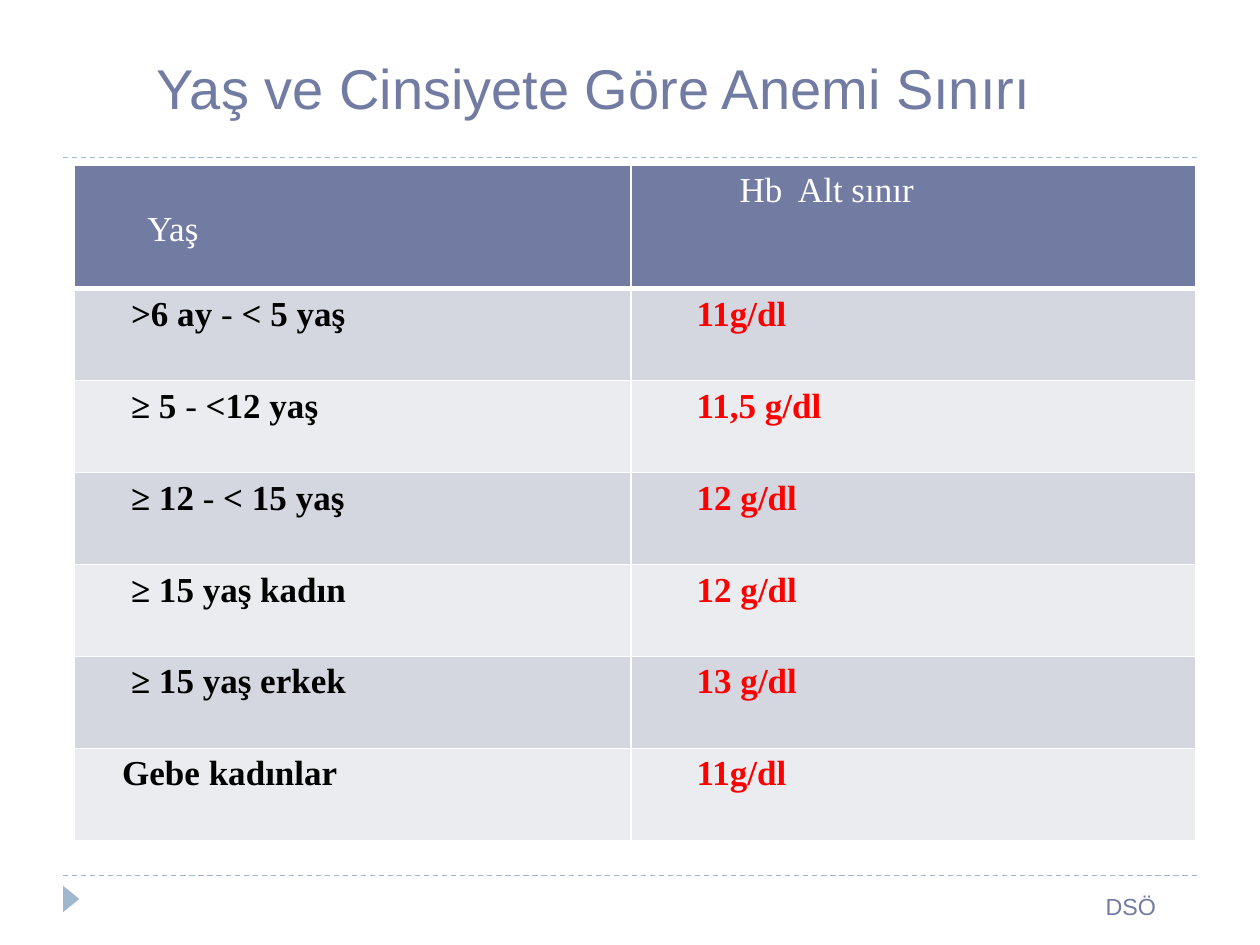
from pptx import Presentation
from pptx.dml.color import RGBColor
from pptx.enum.dml import MSO_LINE
from pptx.enum.shapes import MSO_CONNECTOR as Conn, MSO_SHAPE as Shape
from pptx.enum.text import MSO_ANCHOR as Anchor, PP_ALIGN as Align
from pptx.oxml.ns import qn
from pptx.util import Inches, Pt
from lxml.etree import SubElement as Sub

INK, PALE, RED = "727CA3", "9FB8CD", "FF0000"
WHITE, BLACK = "FFFFFF", "000000"
BANDS = ("D5D7E0", "EBECF0")


def rgb(code):
    return RGBColor.from_string(code)


class Page:
    sans, serif = "Arial", "Times New Roman"

    def __init__(self, slide):
        self.slide = slide
        self.shapes = slide.shapes

    def font(self, para, size, color, face, bold=False):
        font = para.font
        font.name, font.size, font.bold = face, Pt(size), bold
        font.color.rgb = rgb(color)

    def rule(self, y):
        line = self.shapes.add_connector(
            Conn.STRAIGHT, Inches(0.5), Inches(y), Inches(9.5), Inches(y))
        line.line.color.rgb = rgb(PALE)
        line.line.width = Pt(0.75)
        line.line.dash_style = MSO_LINE.DASH
        Sub(line._element.spPr, qn("a:effectLst"))

    def marker(self, x, y, w, h):
        mark = self.shapes.add_shape(
            Shape.ISOSCELES_TRIANGLE, Inches(x), Inches(y), Inches(w), Inches(h))
        mark.rotation = 90
        mark.shadow.inherit = False
        mark.fill.solid()
        mark.fill.fore_color.rgb = rgb(PALE)
        mark.line.fill.background()

    def text(self, words, x, y, w, h, size):
        box = self.shapes.add_textbox(Inches(x), Inches(y), Inches(w), Inches(h))
        frame = box.text_frame
        frame.word_wrap = True
        frame.vertical_anchor = Anchor.MIDDLE
        frame.margin_right = Inches(0.3)
        para = frame.paragraphs[0]
        para.text = words
        para.alignment = Align.CENTER
        self.font(para, size, INK, self.sans)

    def table(self, x, y, cols, rows):
        grid = self.shapes.add_table(
            len(rows), len(cols), Inches(x), Inches(y),
            Inches(sum(cols)), Inches(sum(rows))).table
        for col, width in zip(grid.columns, cols):
            col.width = Inches(width)
        for row, height in zip(grid.rows, rows):
            row.height = Inches(height)
        return grid

    def border(self, cell, base):
        props = cell._tc.get_or_add_tcPr()
        for side in "LRTB":
            width = base if side == "B" else 1
            line = Sub(props, qn(f"a:ln{side}"), w=str(Pt(width)))
            Sub(Sub(line, qn("a:solidFill")), qn("a:srgbClr"), val=WHITE)

    def cell(self, cell, words, fill, color, indent, bold=True, top=0.05, base=1):
        """Parts of the words between bars are set in regular weight."""
        self.border(cell, base)
        cell.fill.solid()
        cell.fill.fore_color.rgb = rgb(fill)
        cell.margin_left = Inches(0.1 + indent)
        cell.margin_top = Inches(top)
        para = cell.text_frame.paragraphs[0]
        self.font(para, 20, color, self.serif, bold)
        for i, part in enumerate(words.split("|")):
            run = para.add_run()
            run.text = part
            if i % 2:
                run.font.bold = False


LIMITS = [
    (">6 ay| - |< 5 yaş", "11g/dl"),
    ("≥ 5 |-| <12 yaş", "11,5 g/dl"),
    ("≥ 12 |-| < 15 yaş", "12 g/dl"),
    ("≥ 15 yaş kadın", "12 g/dl"),
    ("≥ 15 yaş erkek", "13 g/dl"),
    ("Gebe kadınlar", "11g/dl"),
]


def main():
    deck = Presentation()
    deck.slide_width, deck.slide_height = Inches(10), Inches(7.5)
    page = Page(deck.slides.add_slide(deck.slide_layouts[6]))

    # Frame lines and corner marker
    page.rule(6.95)
    page.rule(1.25)
    page.marker(0.46, 7.07, 0.21, 0.13)

    # Title
    page.text("Yaş ve Cinsiyete Göre Anemi Sınırı", 0.43, 0.21, 8.77, 0.97, 32)

    # Table: header, then one row per age group
    grid = page.table(0.59, 1.31, (4.42, 4.48), [0.98] + [0.73] * len(LIMITS))
    page.cell(grid.cell(0, 0), "Yaş", INK, WHITE, 0.48, False, top=0.36, base=3)
    page.cell(grid.cell(0, 1), "Hb  Alt sınır", INK, WHITE, 0.76, False, base=3)
    for i, (age, limit) in enumerate(LIMITS):
        fill = BANDS[i % 2]
        indent = 0.28 if age.startswith("Gebe") else 0.35
        page.cell(grid.cell(i + 1, 0), age, fill, BLACK, indent)
        page.cell(grid.cell(i + 1, 1), limit, fill, RED, 0.42)

    # Source
    page.text("DSÖ", 8.15, 6.85, 1.85, 0.68, 13.3)

    deck.save("out.pptx")


if __name__ == "__main__":
    main()
